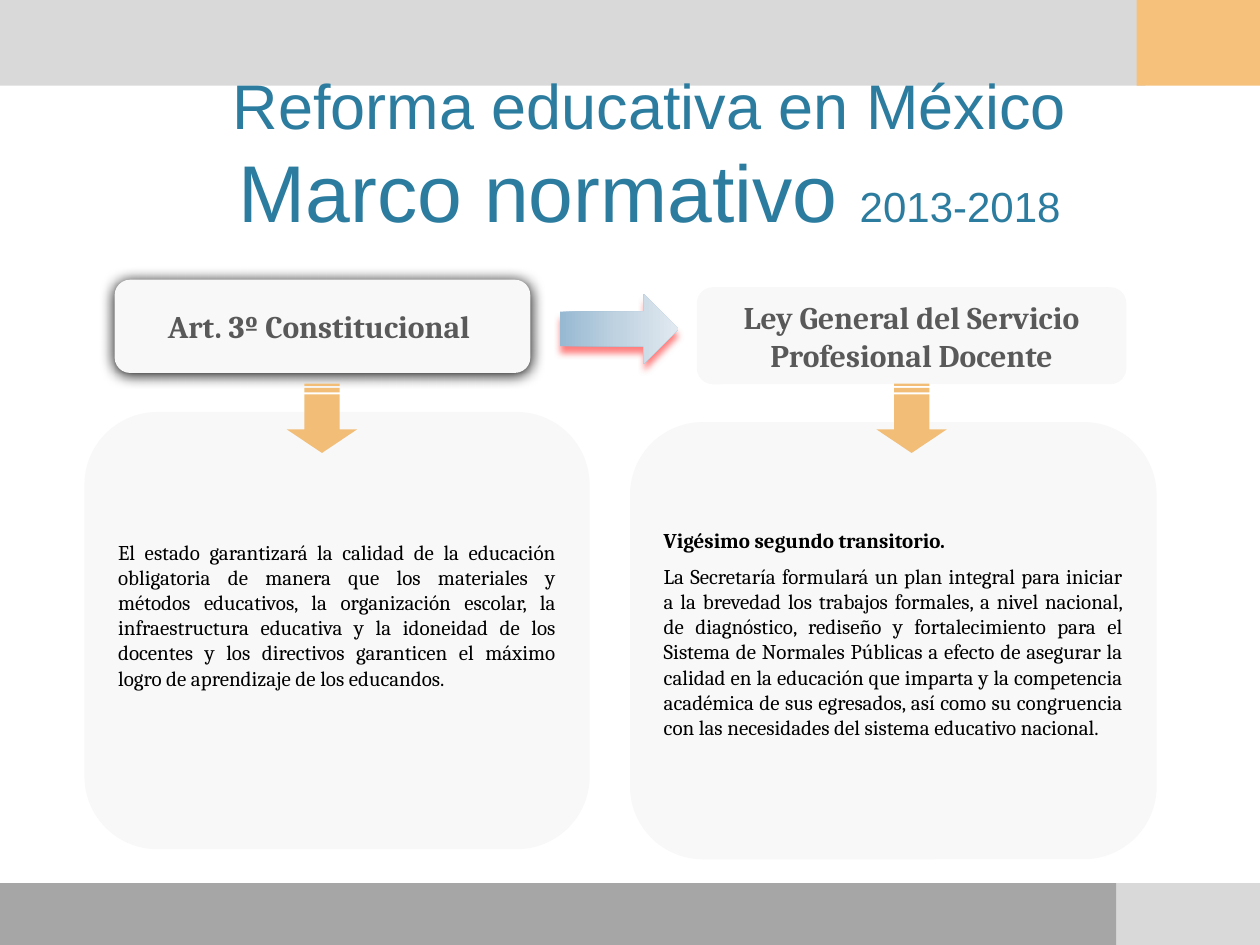
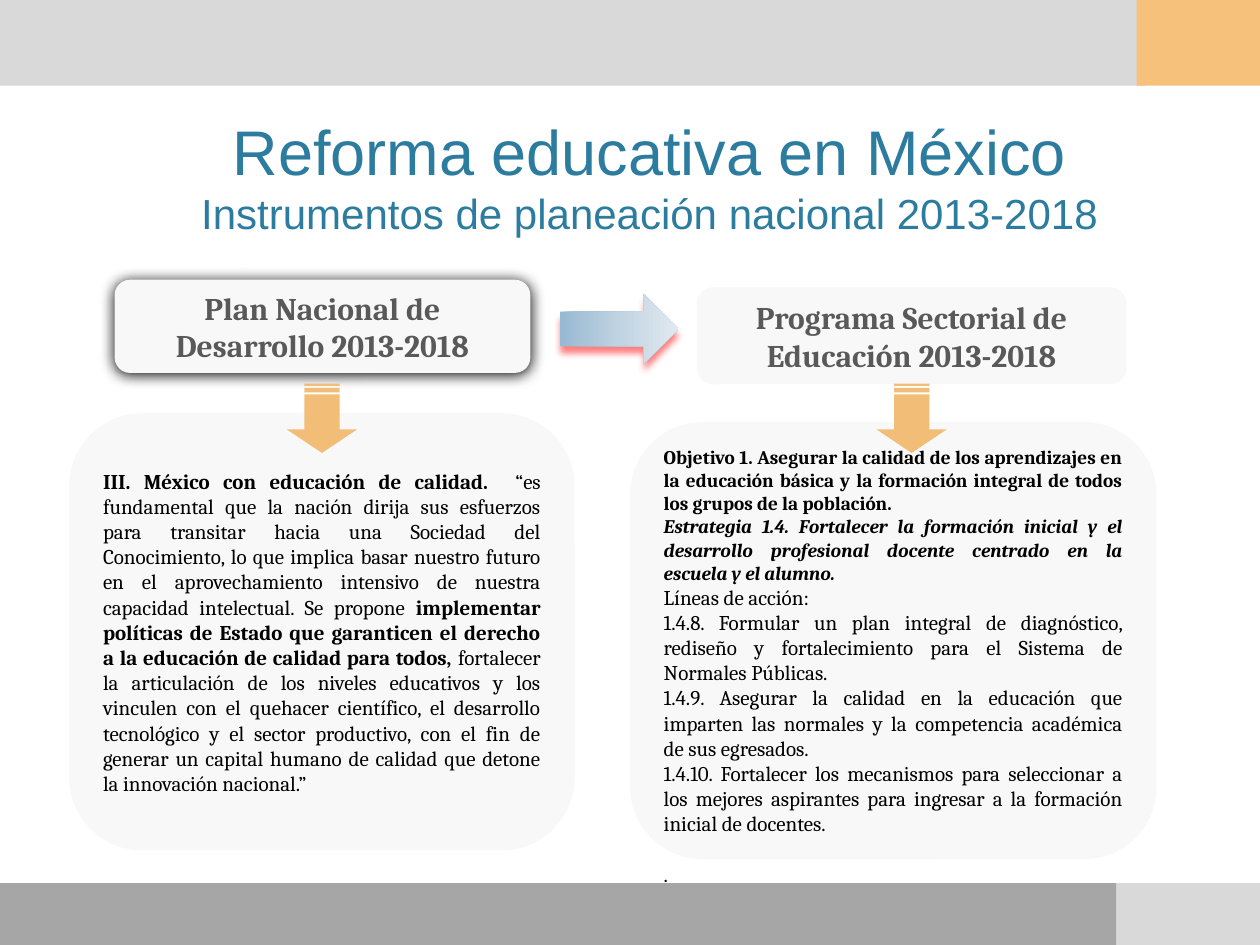
from dataclasses import dataclass

from lxml import etree
from pptx import Presentation
from pptx import util as u
from pptx.dml.color import RGBColor
from pptx.enum import shapes, text
from pptx.oxml import ns


@dataclass(frozen=True)
class Theme:
    # Colours
    light_band: str = "D9D9D9"
    dark_band: str = "A6A6A6"
    accent: str = "F6C17A"
    title: str = "2C7C9F"
    panel: str = "F8F8F8"
    heading: str = "595959"
    body: str = "000000"
    down_arrow: str = "F1BD77"
    arrow_glow: str = "FF8080"
    arrow_blend: tuple = ("97B9D2", "C0D3E1", "E1E9F0")
    # Fonts and type sizes
    title_font: str = "Arial"
    text_font: str = "Cambria"
    title_size: int = 36
    title_big: int = 46
    title_small: int = 24
    heading_size: int = 18
    body_size: int = 12
    body_small: int = 11


THEME = Theme()
SHAPE = shapes.MSO_SHAPE
ALIGN = text.PP_ALIGN
ANCHOR = text.MSO_ANCHOR


def inches(box):
    return [u.Inches(value) for value in box]


def apply(target, values):
    for name, value in values.items():
        setattr(target, name, value)


def add_block(page, kind, box, color=None):
    block = page.shapes.add_shape(kind, *inches(box))
    block.shadow.inherit = False
    block.line.fill.background()
    if color:
        block.fill.solid()
        block.fill.fore_color.rgb = RGBColor.from_string(color)
    return block


def add_shadow(block, color, blur, distance):
    """Cast a shadow straight down; blur and distance are in points."""
    effects = block.element.spPr.find(ns.qn("a:effectLst"))
    shadow = etree.SubElement(
        effects, ns.qn("a:outerShdw"), blurRad=str(u.Pt(blur)),
        dist=str(u.Pt(distance)), dir="5400000", algn="ctr", rotWithShape="0")
    etree.SubElement(shadow, ns.qn("a:srgbClr"), val=color)


def add_span(para, words, font, size, color, **style):
    span = para.add_run()
    span.text = words
    span.font.color.rgb = RGBColor.from_string(color)
    apply(span.font, {"name": font, "size": u.Pt(size), **style})


# Bands at the top and bottom of every slide
def draw_bands(page):
    bands = [
        ((0, -0.03, 9.09, 0.71), THEME.light_band),
        ((9.02, -0.03, 0.98, 0.71), THEME.accent),
        ((8.77, 7.01, 1.23, 0.49), THEME.light_band),
        ((0, 7.01, 8.86, 0.49), THEME.dark_band),
    ]
    for box, color in bands:
        add_block(page, SHAPE.RECTANGLE, box, color)


# Two-line title; the second line is a list of (words, size)
def draw_title(page, box, subtitle):
    frame = page.shapes.add_textbox(*inches(box)).text_frame
    apply(frame, {"word_wrap": True, "vertical_anchor": ANCHOR.BOTTOM})
    para = frame.paragraphs[0]
    para.alignment = ALIGN.CENTER
    add_span(para, "Reforma educativa en México", THEME.title_font,
             THEME.title_size, THEME.title)
    para.add_line_break()
    for words, size in subtitle:
        add_span(para, words, THEME.title_font, size, THEME.title)


# Heading plate
def draw_heading(page, box, words, raised=False):
    plate = add_block(page, SHAPE.ROUNDED_RECTANGLE, box, THEME.panel)
    if raised:
        add_shadow(plate, THEME.body, 8.5, 1)
    frame = plate.text_frame
    apply(frame, {"word_wrap": True, "vertical_anchor": ANCHOR.MIDDLE})
    para = frame.paragraphs[0]
    para.alignment = ALIGN.CENTER
    add_span(para, words, THEME.text_font, THEME.heading_size,
             THEME.heading, bold=True)


# Body panel; each paragraph is (format values, [(words, style), ...])
def draw_panel(page, box, paragraphs, top=0.05, bottom=0.05):
    frame = add_block(page, SHAPE.ROUNDED_RECTANGLE, box,
                      THEME.panel).text_frame
    apply(frame, {"word_wrap": True, "vertical_anchor": ANCHOR.MIDDLE,
                  "margin_top": u.Inches(top),
                  "margin_bottom": u.Inches(bottom)})
    for index, (layout, spans) in enumerate(paragraphs):
        para = frame.add_paragraph() if index else frame.paragraphs[0]
        apply(para, {"alignment": ALIGN.JUSTIFY, **layout})
        for words, style in spans:
            add_span(para, words, THEME.text_font,
                     **{"size": THEME.body_size, "color": THEME.body, **style})


# Gradient arrow from the left heading to the right one
def draw_link_arrow(page, box):
    arrow = add_block(page, SHAPE.DOWN_ARROW, box)
    arrow.rotation = 270
    arrow.fill.gradient()
    arrow.fill.gradient_angle = 270
    stops = arrow.element.spPr.find(".//" + ns.qn("a:gsLst"))
    for stop in list(stops):
        stops.remove(stop)
    for index, color in enumerate(THEME.arrow_blend):
        stop = etree.SubElement(stops, ns.qn("a:gs"), pos=str(index * 50000))
        etree.SubElement(stop, ns.qn("a:srgbClr"), val=color)
    add_shadow(arrow, THEME.arrow_glow, 4, 4)


# Striped arrow from a heading down to its panel
def draw_down_arrow(page, box):
    arrow = add_block(page, SHAPE.STRIPED_RIGHT_ARROW, box, THEME.down_arrow)
    arrow.rotation = 90
    arrow.adjustments[0] = 0.5
    arrow.adjustments[1] = 0.341


# Slide with two headings, each leading down to a panel
def build_slide(deck, subtitle, left, right):
    page = deck.slides.add_slide(deck.slide_layouts[6])
    draw_bands(page)
    draw_title(page, (0.75, 0.69, 8.81, 1.25), subtitle)
    for side in (left, right):
        draw_panel(page, **side["panel"])
    draw_heading(page, (5.53, 2.28, 3.41, 0.77), right["heading"])
    draw_heading(page, (0.91, 2.22, 3.3, 0.74), left["heading"], raised=True)
    draw_link_arrow(page, (4.64, 2.14, 0.55, 0.94))
    for x in (2.28, 6.96):
        draw_down_arrow(page, (x, 3.04, 0.55, 0.56))


RIGHT_PANEL = (5, 3.35, 4.18, 3.47)
BOLD = {"bold": True}
GOAL = {"bold": True, "size": THEME.body_small}

STATE_DUTY = [({}, [(
    "El estado garantizará la calidad de la educación obligatoria de manera "
    "que los materiales y métodos educativos, la organización escolar, la "
    "infraestructura educativa y la idoneidad de los docentes y los "
    "directivos garanticen el máximo logro de aprendizaje de los educandos. ",
    {})])]

TRANSITORY = [
    ({}, [("Vigésimo segundo transitorio.", BOLD)]),
    ({"space_before": u.Pt(6)}, [(
        "La Secretaría formulará un plan integral para iniciar a la brevedad "
        "los trabajos formales, a nivel nacional, de diagnóstico, rediseño y "
        "fortalecimiento para el Sistema de Normales Públicas a efecto de "
        "asegurar la calidad en la educación que imparta y la competencia "
        "académica de sus egresados, así como su congruencia con las "
        "necesidades del sistema educativo nacional.", {})]),
]

NATIONAL_PLAN = [({}, [
    ("III. México con educación de calidad.", BOLD),
    ("  “es fundamental que la nación dirija sus esfuerzos para transitar "
     "hacia una Sociedad del Conocimiento, lo que implica basar nuestro "
     "futuro en el aprovechamiento intensivo de nuestra capacidad "
     "intelectual. Se propone ", {}),
    ("implementar políticas de Estado que garanticen el derecho a la "
     "educación de calidad para todos, ", BOLD),
    ("fortalecer la articulación de los niveles educativos y los vinculen "
     "con el quehacer científico, el desarrollo tecnológico y el sector "
     "productivo, con el fin de generar un capital humano de calidad que "
     "detone la innovación nacional.” ", {}),
])]

SECTOR_PROGRAM = [
    ({}, [("Objetivo 1. Asegurar la calidad de los aprendizajes en la "
           "educación básica y la formación integral de todos los grupos de "
           "la población.", GOAL)]),
    ({}, [("Estrategia 1.4. Fortalecer la formación inicial y el desarrollo "
           "profesional docente centrado en la escuela y el alumno.",
           {**GOAL, "italic": True})]),
    ({}, [("Líneas de acción:", {})]),
    ({}, [("1.4.8. Formular un plan integral de diagnóstico, rediseño y "
           "fortalecimiento para el Sistema de Normales Públicas. ", {})]),
    ({}, [("1.4.9. Asegurar la calidad en la educación que imparten las "
           "normales y la competencia académica de sus egresados. ", {})]),
    ({}, [("1.4.10. Fortalecer los mecanismos para seleccionar a los mejores "
           "aspirantes para ingresar a la formación inicial de docentes. ",
           {})]),
    ({"alignment": ALIGN.LEFT, "space_before": u.Pt(14.4)}, [(".", {})]),
]


def main():
    deck = Presentation()
    apply(deck, {"slide_width": u.Inches(10), "slide_height": u.Inches(7.5)})

    # Legal framework
    build_slide(
        deck,
        [("Marco normativo ", THEME.title_big),
         ("2013-2018", THEME.title_small)],
        left={"heading": "Art. 3º Constitucional ",
              "panel": {"box": (0.67, 3.27, 4.01, 3.47),
                        "paragraphs": STATE_DUTY, "bottom": 0.3}},
        right={"heading": "Ley General del Servicio Profesional Docente",
               "panel": {"box": RIGHT_PANEL, "paragraphs": TRANSITORY,
                         "bottom": 0.16}})

    # National planning instruments
    build_slide(
        deck,
        [("Instrumentos de planeación nacional 2013-2018",
          THEME.title_small)],
        left={"heading": "Plan Nacional de Desarrollo 2013-2018",
              "panel": {"box": (0.55, 3.28, 4.01, 3.47),
                        "paragraphs": NATIONAL_PLAN}},
        right={"heading": "Programa Sectorial de Educación 2013-2018",
               "panel": {"box": RIGHT_PANEL, "paragraphs": SECTOR_PROGRAM,
                         "top": 0.45}})

    deck.save("out.pptx")


if __name__ == "__main__":
    main()
